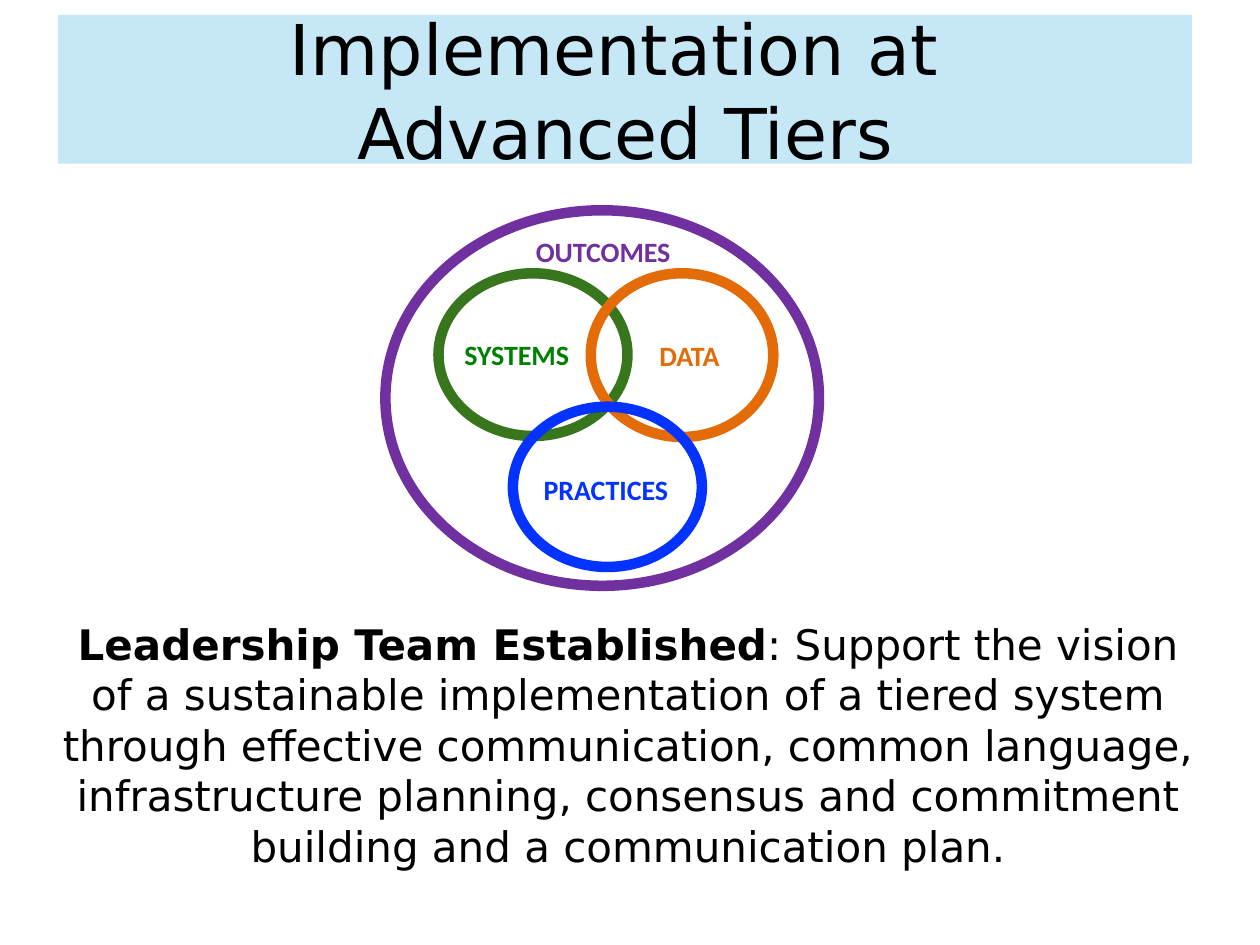
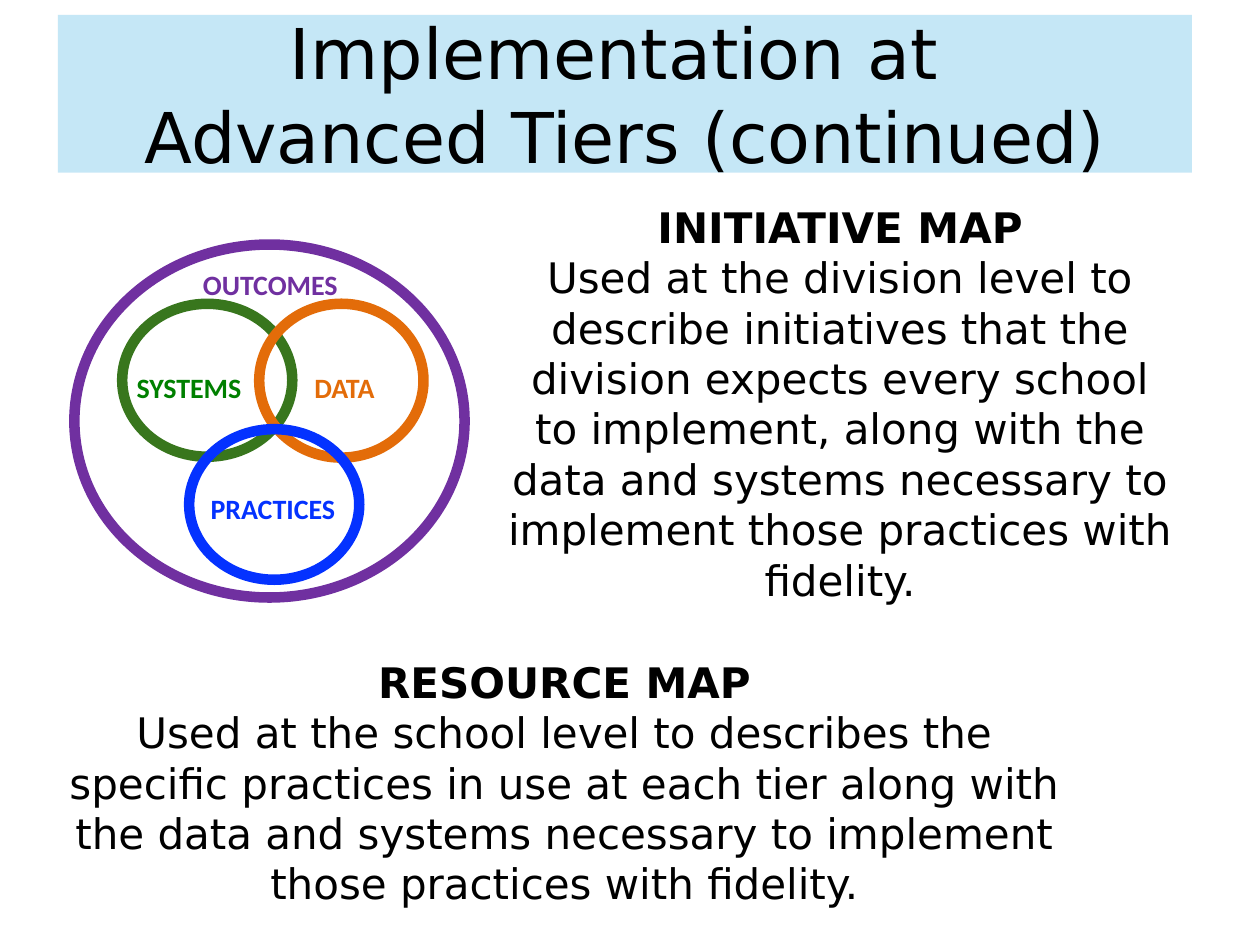
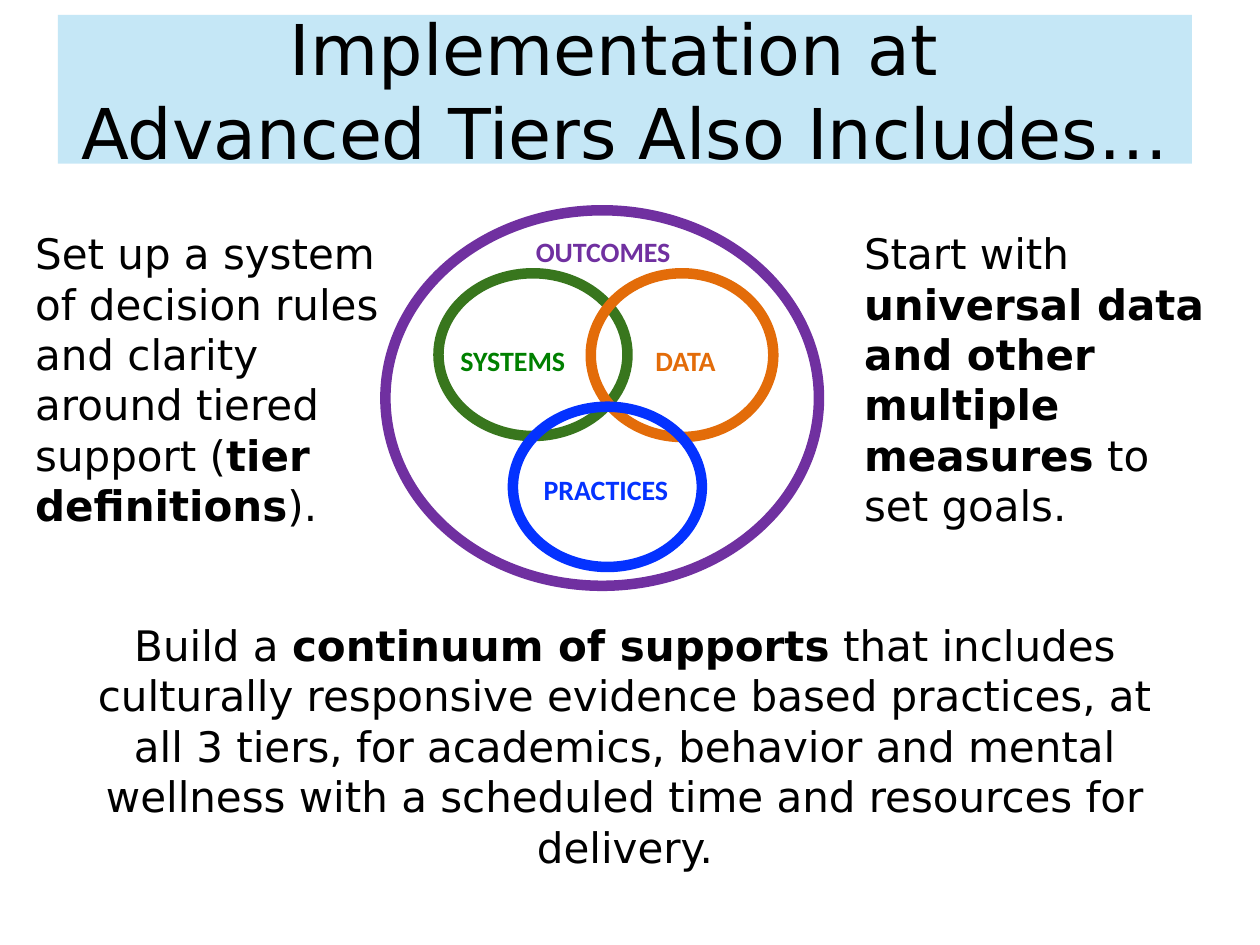
from pptx import Presentation
from pptx.dml.color import RGBColor
from pptx.enum.shapes import MSO_SHAPE
from pptx.enum.text import MSO_ANCHOR, PP_ALIGN
from pptx.oxml.ns import qn
from pptx.util import Cm, Pt
from lxml import etree

RECT, OVAL = MSO_SHAPE.RECTANGLE, MSO_SHAPE.OVAL
MIDDLE, TOP = MSO_ANCHOR.MIDDLE, MSO_ANCHOR.TOP
CENTER, LEFT = PP_ALIGN.CENTER, PP_ALIGN.LEFT

COLORS = {
    "text": "000000", "band": "A9DCF2", "outcomes": "7030A0",
    "systems": "38761D", "systems_label": "008000",
    "data": "E36C09", "practices": "0432FF",
}
TITLE = {"name": "DejaVu Sans", "size": Pt(40), "bold": False}
BODY = {"name": "DejaVu Sans", "size": Pt(24)}
LABEL = {"name": "Calibri", "size": Pt(16), "bold": True}

# Diagram parts in cm, relative to the outer ring's corner
RINGS = [
    ("outcomes", (0, 0, 8.74, 7.57)),
    ("systems", (1.07, 1.27, 3.81, 3.28)),
    ("data", (4.14, 1.27, 3.68, 3.3)),
    ("practices", (2.57, 3.96, 3.81, 3.23)),
]
LABELS = [
    ("OUTCOMES", "outcomes", (2.18, 0.23, 4.42, 1.02)),
    ("SYSTEMS", "systems_label", (1.07, 2.44, 3, 1.02)),
    ("DATA", "data", (4.88, 2.44, 2.34, 1.02)),
    ("PRACTICES", "practices", (2.72, 5.03, 3.45, 1.02)),
]
DIAGRAM_CORNER = (7.77, 4.24)


def rgb(name):
    return RGBColor.from_string(COLORS[name])


def cm(box):
    return [Cm(v) for v in box]


def add_run(p, text, style, color="text"):
    r = p.add_run()
    r.text = text
    for key, value in style.items():
        setattr(r.font, key, value)
    r.font.color.rgb = rgb(color)


def set_frame(tf, anchor, inset_x, inset_y):
    frame = {"word_wrap": True, "vertical_anchor": anchor,
             "margin_left": Cm(inset_x), "margin_right": Cm(inset_x),
             "margin_top": Cm(inset_y), "margin_bottom": Cm(inset_y)}
    for key, value in frame.items():
        setattr(tf, key, value)


def add_title(s, second_line, height=3):
    """Pale band with a two-line heading."""
    sp = s.shapes.add_shape(RECT, *cm((1.17, 0.3, 22.86, height)))
    sp.shadow.inherit = False
    sp.line.fill.background()
    sp.fill.solid()
    sp.fill.fore_color.rgb = rgb("band")
    color = sp.fill._xPr.find(".//" + qn("a:srgbClr"))
    etree.SubElement(color, qn("a:alpha")).set("val", "67000")
    set_frame(sp.text_frame, MIDDLE, 0.25, 0.13)
    p = sp.text_frame.paragraphs[0]
    p.alignment = CENTER
    add_run(p, "Implementation at ", TITLE)
    p.add_line_break()
    add_run(p, second_line, TITLE)


def add_text(shapes, box, paragraphs, style=BODY, color="text", align=CENTER):
    """Text box; each paragraph is a list of (text, bold) runs."""
    tf = shapes.add_textbox(*cm(box)).text_frame
    set_frame(tf, TOP, 0.25, 0.25)
    for i, runs in enumerate(paragraphs):
        p = tf.paragraphs[0] if i == 0 else tf.add_paragraph()
        p.alignment = align
        for text, bold in runs:
            add_run(p, text, {**style, "bold": bold}, color)


def add_diagram(s, corner=DIAGRAM_CORNER, scale=(1, 1), nudges=None):
    """Three overlapping rings inside a larger one, with labels."""
    nudges = nudges or {}
    group = s.shapes.add_group_shape()

    def place(box, nudge=(0, 0)):
        x, y, w, h = box
        return (corner[0] + x * scale[0] + nudge[0],
                corner[1] + y * scale[1] + nudge[1],
                w * scale[0], h * scale[1])

    for color, box in RINGS:
        ring = group.shapes.add_shape(OVAL, *cm(place(box)))
        ring.shadow.inherit = False
        ring.fill.background()
        ring.line.color.rgb = rgb(color)
        ring.line.width = Pt(6)
    for text, color, box in LABELS:
        add_text(group.shapes, place(box, nudges.get(text, (0, 0))),
                 [[(text, True)]], LABEL, color)


def main():
    prs = Presentation()
    prs.slide_width, prs.slide_height = Cm(25.4), Cm(19.05)
    blank = prs.slide_layouts[6]

    # Leadership team
    s = prs.slides.add_slide(blank)
    add_title(s, "Advanced Tiers")
    add_diagram(s, nudges={"SYSTEMS": (0.08, -0.12), "DATA": (0.08, -0.1)})
    add_text(s.shapes, (0.79, 12.22, 23.75, 5.74), [[
        ("Leadership Team Established", True),
        (": Support the vision of a sustainable implementation of a tiered "
         "system through effective communication, common language, "
         "infrastructure planning, consensus and commitment building and a "
         "communication plan.", False)]])

    # Initiative and resource maps
    s = prs.slides.add_slide(blank)
    add_title(s, "Advanced Tiers (continued)", height=3.18)
    add_diagram(s, corner=(1.5, 4.93), scale=(0.9, 0.94))
    add_text(s.shapes, (9.91, 3.81, 14.05, 8.76), [
        [("INITIATIVE MAP", True)],
        [("Used at the division level to describe initiatives that the "
          "division expects every school to implement, along with the data "
          "and systems necessary to implement those practices with "
          "fidelity.", False)]])
    add_text(s.shapes, (0.94, 12.98, 20.88, 5.11), [
        [("RESOURCE MAP", True)],
        [("Used at the school level to describes the specific practices in "
          "use at each tier along with the data and systems necessary to "
          "implement those practices with fidelity.", False)]])

    # Data, continuum of supports and decision rules
    s = prs.slides.add_slide(blank)
    add_title(s, "Advanced Tiers Also Includes…")
    add_diagram(s)
    add_text(s.shapes, (17.17, 4.34, 7.42, 3.61), [[
        ("Start with ", False),
        ("universal data and other multiple measures", True),
        (" to set goals.", False)]], align=LEFT)
    add_text(s.shapes, (1.17, 12.24, 22.86, 1.57), [[
        ("Build a ", False), ("continuum of supports", True),
        (" that includes culturally responsive evidence based practices, at "
         "all 3 tiers, for academics, behavior and mental wellness with a "
         "scheduled time and resources for delivery.", False)]])
    add_text(s.shapes, (0.46, 4.34, 7.59, 1.57), [[
        ("Set up a system of decision rules and clarity around tiered "
         "support (", False),
        ("tier definitions", True), (").", False)]], align=LEFT)

    prs.save("out.pptx")


if __name__ == "__main__":
    main()
